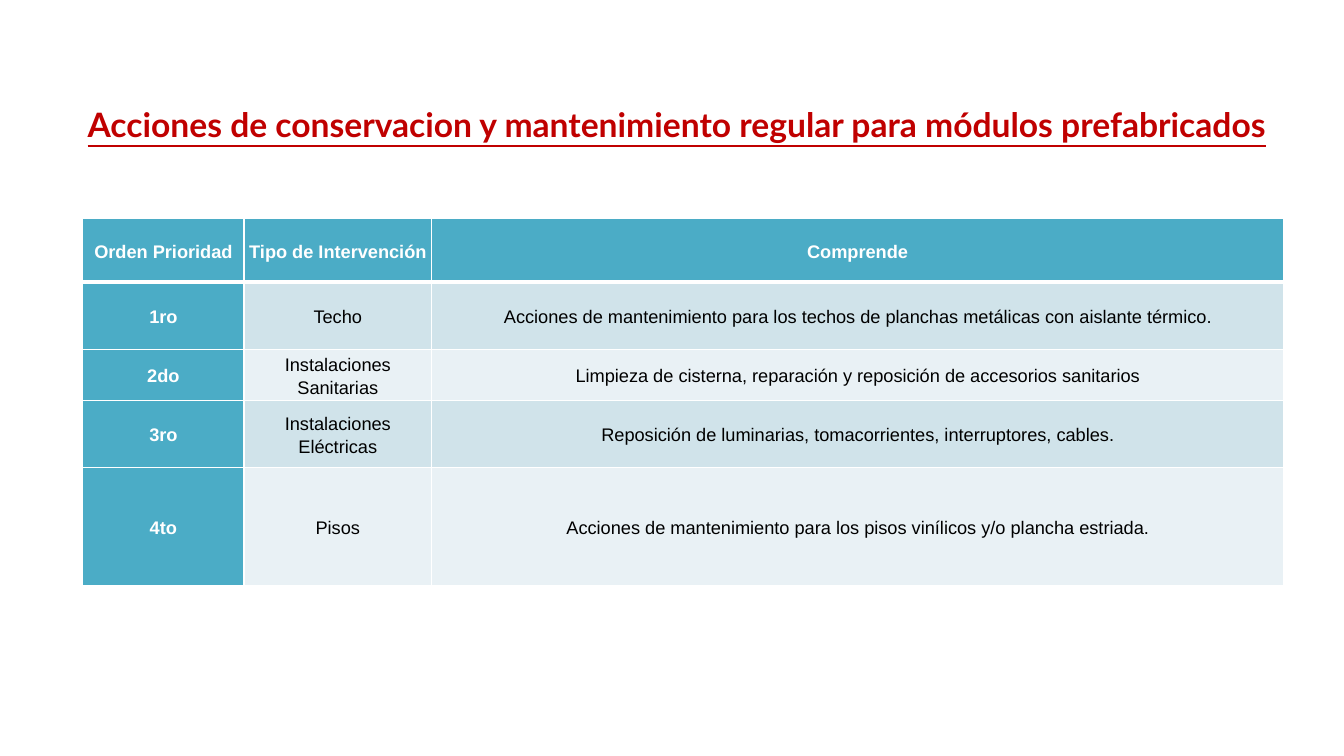
import pptx
import pptx.dml.color
import pptx.enum.text
import pptx.util
from lxml import etree
from pptx.oxml.ns import qn
from pptx.util import Inches

COLORS = {
    "title": "C00000",
    "accent": "4BACC6",
    "band_dark": "D0E3EA",
    "band_light": "E9F1F5",
    "white": "FFFFFF",
    "black": "000000",
}

TITLE = "Acciones de conservacion y mantenimiento regular para módulos prefabricados"
ACTIONS = [
    ("Orden Prioridad", "Tipo de Intervención", "Comprende"),
    ("1ro", "Techo",
     "Acciones de mantenimiento para los techos de planchas metálicas con aislante térmico."),
    ("2do", "Instalaciones Sanitarias",
     "Limpieza de cisterna, reparación y reposición de accesorios sanitarios"),
    ("3ro", "Instalaciones Eléctricas",
     "Reposición de luminarias, tomacorrientes, interruptores, cables."),
    ("4to", "Pisos",
     "Acciones de mantenimiento para los pisos vinílicos y/o plancha estriada."),
]
COLUMN_WIDTHS = [1.6, 1.86, 8.45]
ROW_HEIGHTS = [0.63, 0.67, 0.5, 0.67, 1.17]


def rgb(name):
    return pptx.dml.color.RGBColor.from_string(COLORS[name])


class SlideBuilder:
    line_spacing = 1.15
    title_font, title_size = "Lato", 24
    table_font, table_size = "Arial", 13

    def __init__(self, slide):
        self.slide = slide

    def add_text(self, paragraph, text, font, size, color, bold):
        paragraph.line_spacing = self.line_spacing
        run = paragraph.add_run()
        run.text = text
        run.font.name = font
        run.font.size = pptx.util.Pt(size)
        run.font.bold = bold
        run.font.color.rgb = rgb(color)
        return run

    def title(self, text, left, top, width, height):
        box = self.slide.shapes.add_textbox(
            Inches(left), Inches(top), Inches(width), Inches(height))
        box.text_frame.word_wrap = True
        heading = self.add_text(box.text_frame.paragraphs[0], text,
                                self.title_font, self.title_size, "title", True)
        heading.font.underline = True

    def border(self, cell, side, points):
        line = etree.SubElement(cell._tc.get_or_add_tcPr(), qn(f"a:ln{side}"),
                                w=str(pptx.util.Pt(points)))
        fill = etree.SubElement(line, qn("a:solidFill"))
        etree.SubElement(fill, qn("a:srgbClr"), val=COLORS["white"])

    def cell(self, cell, text, row, column):
        is_heading = row == 0 or column == 0
        for side in "LRTB":
            under_header = (row, side) in ((0, "B"), (1, "T"))
            self.border(cell, side, 3 if under_header else 1)
        band = "band_dark" if row % 2 else "band_light"
        cell.fill.solid()
        cell.fill.fore_color.rgb = rgb("accent" if is_heading else band)
        cell.margin_left = cell.margin_right = Inches(0.05)
        cell.margin_top = cell.margin_bottom = 0
        cell.vertical_anchor = pptx.enum.text.MSO_ANCHOR.MIDDLE
        paragraph = cell.text_frame.paragraphs[0]
        paragraph.alignment = pptx.enum.text.PP_ALIGN.CENTER
        self.add_text(paragraph, text, self.table_font, self.table_size,
                      "white" if is_heading else "black", is_heading)

    def table(self, rows, left, top, widths, heights):
        table = self.slide.shapes.add_table(
            len(rows), len(widths), Inches(left), Inches(top),
            Inches(sum(widths)), Inches(sum(heights))).table
        for column, width in zip(table.columns, widths):
            column.width = Inches(width)
        for table_row, height in zip(table.rows, heights):
            table_row.height = Inches(height)
        for row, texts in enumerate(rows):
            for column, text in enumerate(texts):
                self.cell(table.cell(row, column), text, row, column)


def main():
    presentation = pptx.Presentation()
    presentation.slide_width = Inches(13.33)
    presentation.slide_height = Inches(7.5)
    builder = SlideBuilder(
        presentation.slides.add_slide(presentation.slide_layouts[6]))
    builder.title(TITLE, 0.77, 0.92, 12.02, 1.03)
    builder.table(ACTIONS, 0.82, 2.17, COLUMN_WIDTHS, ROW_HEIGHTS)
    presentation.save("out.pptx")


if __name__ == "__main__":
    main()
